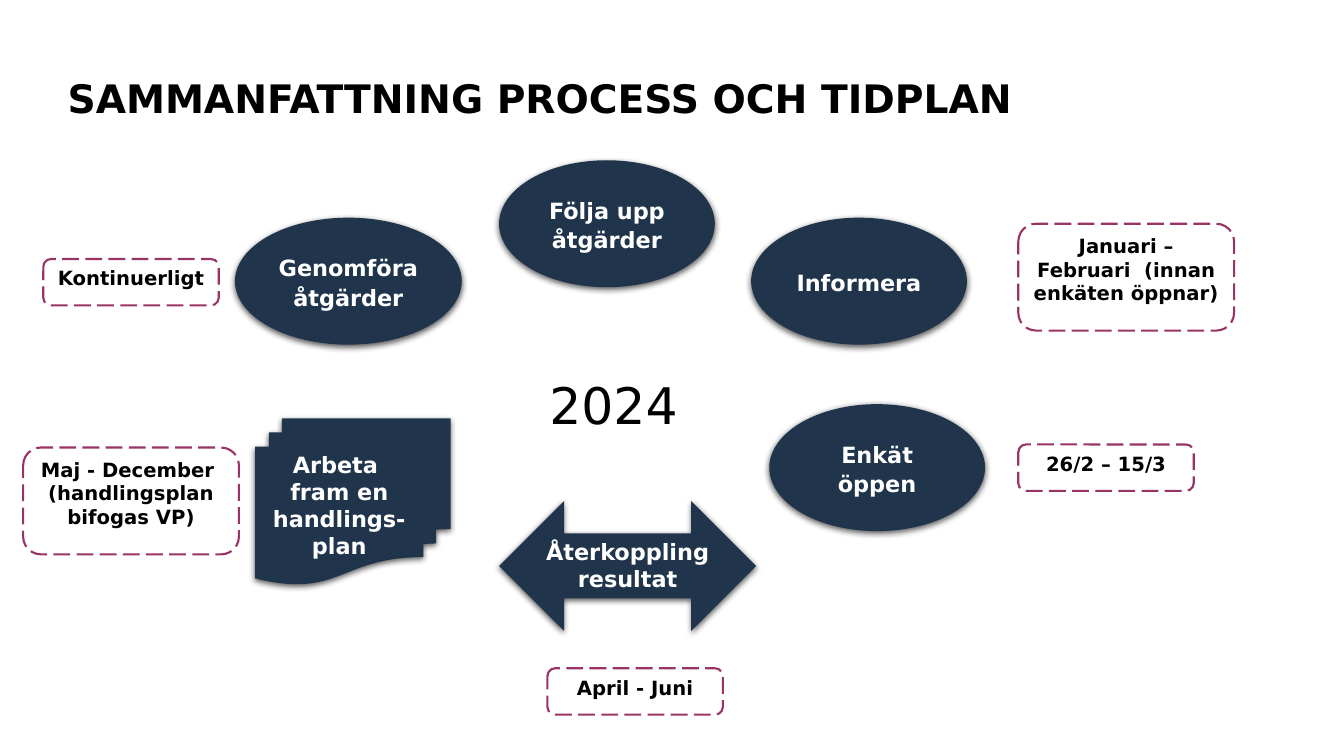
from dataclasses import dataclass
from typing import Any

from lxml import etree
from pptx import Presentation
from pptx.dml.color import RGBColor
from pptx.enum.dml import MSO_LINE
from pptx.enum.shapes import MSO_SHAPE
from pptx.enum.text import MSO_ANCHOR, MSO_AUTO_SIZE, PP_ALIGN
from pptx.oxml.ns import qn
from pptx.util import Inches, Pt

NAVY = RGBColor(0x20, 0x35, 0x4C)
PLUM = RGBColor(0x99, 0x33, 0x66)
WHITE = RGBColor(0xFF, 0xFF, 0xFF)
BLACK = RGBColor(0, 0, 0)
FONT = "DejaVu Sans"

ELLIPSE = MSO_SHAPE.OVAL
ARROW = MSO_SHAPE.LEFT_RIGHT_ARROW
DOCUMENTS = MSO_SHAPE.FLOWCHART_MULTIDOCUMENT
ROUNDED = MSO_SHAPE.ROUNDED_RECTANGLE
RECTANGLE = MSO_SHAPE.RECTANGLE
LONG_DASH = MSO_LINE.LONG_DASH
TOP, MIDDLE, BOTTOM = MSO_ANCHOR.TOP, MSO_ANCHOR.MIDDLE, MSO_ANCHOR.BOTTOM
LEFT, CENTER = PP_ALIGN.LEFT, PP_ALIGN.CENTER
NO_FIT = MSO_AUTO_SIZE.NONE

ELLIPSE_FRAME = {
    "vertical_anchor": MIDDLE,
    "margin_left": Inches(0.07),
    "margin_right": Inches(0.07),
    "margin_top": Inches(0.04),
    "margin_bottom": Inches(0.04),
}
TITLE_FRAME = {
    "vertical_anchor": BOTTOM,
    "margin_left": 0,
    "margin_right": 0,
    "margin_top": 0,
    "margin_bottom": 0,
}


@dataclass
class Step:
    text: str
    left: float
    top: float
    width: float = 2.14
    height: float = 1.26
    kind: Any = ELLIPSE


@dataclass
class Period:
    text: str
    left: float
    top: float
    width: float = 1.74
    height: float = 0.46


STEPS = [
    Step("Följa upp åtgärder", 4.95, 1.59),
    Step("Informera", 7.45, 2.16),
    Step("Enkät öppen", 7.63, 4.01),
    Step("Genomföra åtgärder", 2.33, 2.16, 2.25),
    Step("Återkoppling resultat", 4.95, 4.97, 2.55, 1.29, ARROW),
    Step("Arbeta  fram en handlings-plan", 2.53, 4.15, 1.94, 1.65, DOCUMENTS),
]
PERIODS = [
    Period("Januari –Februari  (innan enkäten öppnar)", 10.1, 2.22, 2.14, 1.06),
    Period("26/2 – 15/3", 10.1, 4.41),
    Period("April - Juni", 5.43, 6.63),
    Period("Maj - December  (handlingsplan bifogas VP)", 0.23, 4.44, 2.14, 1.06),
    Period("Kontinuerligt", 0.43, 2.57),
]


def apply(target: Any, values: dict[str, Any]) -> None:
    for name, value in values.items():
        setattr(target, name, value)


def write(sp: Any, text: str, size: int, color: RGBColor, bold: bool,
          frame: dict[str, Any], paragraph: dict[str, Any]) -> None:
    tf = sp.text_frame
    apply(tf, {"word_wrap": True, "auto_size": NO_FIT} | frame)
    p = tf.paragraphs[0]
    apply(p, {"alignment": CENTER, "space_before": Pt(0)} | paragraph)
    r = p.add_run()
    r.text = text
    apply(r.font, {"name": FONT, "size": Pt(size), "bold": bold})
    r.font.color.rgb = color


def add_box(s: Any, kind: Any, left: float, top: float, width: float,
            height: float, fill: RGBColor) -> Any:
    sp = s.shapes.add_shape(kind, Inches(left), Inches(top), Inches(width), Inches(height))
    sp.shadow.inherit = False
    sp.fill.solid()
    sp.fill.fore_color.rgb = fill
    sp.line.fill.background()
    return sp


def add_shadow(sp: Any) -> None:
    effects = sp.element.spPr.find(qn("a:effectLst"))
    shadow = etree.SubElement(effects, qn("a:outerShdw"), blurRad=str(Pt(4.5)),
                              dist=str(Pt(1.5)), dir="5400000", rotWithShape="0")
    color = etree.SubElement(shadow, qn("a:srgbClr"), val=str(BLACK))
    etree.SubElement(color, qn("a:alpha"), val="63000")


def add_step(s: Any, step: Step) -> None:
    sp = add_box(s, step.kind, step.left, step.top, step.width, step.height, NAVY)
    add_shadow(sp)
    is_ellipse = step.kind == ELLIPSE
    frame = ELLIPSE_FRAME if is_ellipse else {"vertical_anchor": TOP}
    paragraph = {"line_spacing": 1.1} if is_ellipse else {}
    write(sp, step.text, 16, WHITE, True, frame, paragraph)


def add_period(s: Any, period: Period) -> None:
    sp = add_box(s, ROUNDED, period.left, period.top, period.width, period.height, WHITE)
    sp.line.color.rgb = PLUM
    apply(sp.line, {"width": Pt(1.5), "dash_style": LONG_DASH})
    write(sp, period.text, 14, BLACK, True, {"vertical_anchor": TOP}, {})


def add_title(s: Any, text: str) -> None:
    title = s.shapes.title
    apply(title, {"left": Inches(0.67), "top": Inches(0.3),
                  "width": Inches(12), "height": Inches(0.91)})
    write(title, text, 28, BLACK, True, TITLE_FRAME,
          {"alignment": LEFT, "line_spacing": 0.9})


def main() -> None:
    prs = Presentation()
    prs.slide_width = Inches(13.33)
    prs.slide_height = Inches(7.5)
    s = prs.slides.add_slide(prs.slide_layouts[5])
    add_title(s, "SAMMANFATTNING PROCESS OCH TIDPLAN")
    year = add_box(s, RECTANGLE, 5.25, 3.58, 1.67, 0.87, WHITE)
    write(year, "2024", 36, BLACK, False, {"vertical_anchor": MIDDLE}, {})
    for step in STEPS:
        add_step(s, step)
    for period in PERIODS:
        add_period(s, period)
    prs.save("out.pptx")


if __name__ == "__main__":
    main()
